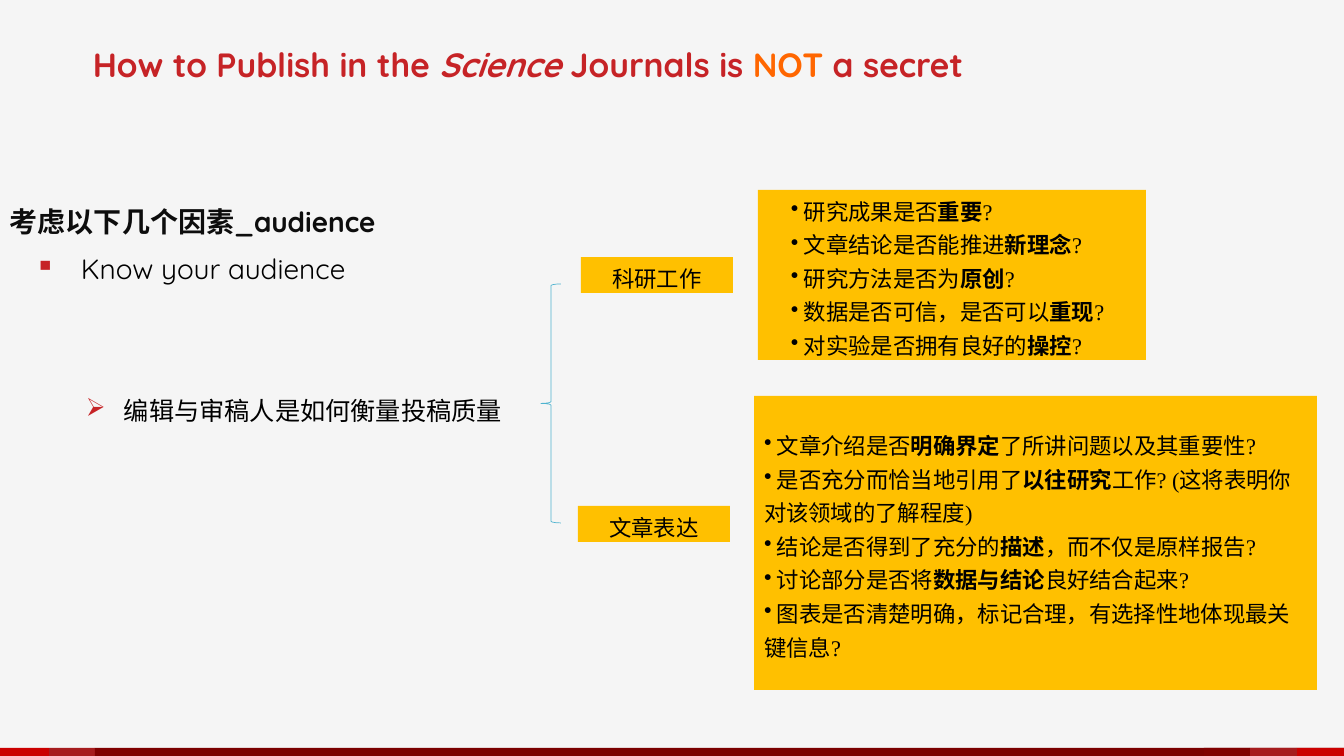
from lxml import etree
from pptx import Presentation
from pptx.dml.color import RGBColor
from pptx.enum.shapes import MSO_SHAPE
from pptx.enum.text import MSO_ANCHOR, PP_ALIGN
from pptx.oxml.ns import qn
from pptx.util import Pt

EMU_PER_PX = 914400 / 100.8
RECTANGLE, LEFT_BRACE = MSO_SHAPE.RECTANGLE, MSO_SHAPE.LEFT_BRACE
MIDDLE, TOP = MSO_ANCHOR.MIDDLE, MSO_ANCHOR.TOP
LEFT, CENTER = PP_ALIGN.LEFT, PP_ALIGN.CENTER

BACKGROUND = RGBColor(0xF5, 0xF5, 0xF5)
RED = RGBColor(0xC6, 0x23, 0x26)
ORANGE = RGBColor(0xFF, 0x66, 0x00)
AMBER = RGBColor(0xFF, 0xC0, 0x00)
TEAL = RGBColor(0x4E, 0xB3, 0xCF)
BLACK = RGBColor(0x00, 0x00, 0x00)
NEAR_BLACK = RGBColor(0x0D, 0x0D, 0x0D)
BAR_DARK = RGBColor(0x7B, 0x00, 0x00)
BAR_MAROON = RGBColor(0x80, 0x00, 0x00)
BAR_CRIMSON = RGBColor(0xA6, 0x1C, 0x1E)
BAR_BRIGHT = RGBColor(0xCB, 0x00, 0x00)

SANS, SERIF = "Quicksand", "Times New Roman"

FOOTER_BARS = [
    (140, 1204, BAR_DARK),
    (0, 49, BAR_BRIGHT),
    (49, 46, BAR_CRIMSON),
    (95, 45, BAR_MAROON),
    (1297, 47, BAR_BRIGHT),
    (1250, 47, BAR_CRIMSON),
    (1204, 46, BAR_MAROON),
]
TITLE_RUNS = [
    ("How to Publish in the ", RED, False),
    ("Science ", RED, True),
    ("Journals is ", RED, False),
    ("NOT", ORANGE, False),
    (" a secret", RED, False),
]
RESEARCH_QUESTIONS = [
    " 研究成果是否*重要*?",
    " 文章结论是否能推进*新理念*?",
    " 研究方法是否为*原创*?",
    " 数据是否可信，是否可以*重现*?",
    " 对实验是否拥有良好的*操控*?",
]
WRITING_QUESTIONS = [
    " 文章介绍是否*明确界定*了所讲问题以及其重要性?",
    " 是否充分而恰当地引用了*以往研究*工作? (这将表明你对该领域的了解程度)",
    " 结论是否得到了充分的*描述*，而不仅是原样报告?",
    " 讨论部分是否将*数据与结论*良好结合起来?",
    " 图表是否清楚明确，标记合理，有选择性地体现最关键信息?",
]


def px(length):
    """Turn pixels into EMU."""
    return round(length * EMU_PER_PX)


def add_box(slide, kind, left, top, width, height, fill=None):
    """Add a preset shape without outline or shadow."""
    shape = slide.shapes.add_shape(kind, px(left), px(top), px(width), px(height))
    shape.shadow.inherit = False
    shape.line.fill.background()
    if fill is None:
        shape.fill.background()
    else:
        shape.fill.solid()
        shape.fill.fore_color.rgb = fill
    return shape


def add_text_box(slide, left, top, width, height, inset_top=5):
    """Add a wrapping text box and return its text frame."""
    box = slide.shapes.add_textbox(px(left), px(top), px(width), px(height))
    frame = box.text_frame
    frame.word_wrap = True
    frame.vertical_anchor = TOP
    frame.margin_top = px(inset_top)
    return frame


def next_paragraph(frame, index):
    """Return the first paragraph of a frame, or a new one after it."""
    return frame.add_paragraph() if index else frame.paragraphs[0]


def set_bullet(paragraph, character, color=None, margin=0, hanging=0):
    """Give a paragraph a bullet character and its indents."""
    properties = paragraph._p.get_or_add_pPr()
    properties.set("marL", str(px(margin)))
    properties.set("indent", str(-px(hanging)))
    if color is not None:
        bullet_color = etree.SubElement(properties, qn("a:buClr"))
        etree.SubElement(bullet_color, qn("a:srgbClr")).set("val", str(color))
    etree.SubElement(properties, qn("a:buChar")).set("char", character)


def set_font(paragraph, name, size, color, bold=False):
    """Set the font shared by all runs of a paragraph."""
    font = paragraph.font
    font.name, font.size, font.bold = name, Pt(size), bold
    font.color.rgb = color


def add_panel(slide, left, top, width, height, lines, bullet=None, inset=10, align=LEFT):
    """Add an amber panel whose text between asterisks is bold."""
    panel = add_box(slide, RECTANGLE, left, top, width, height, AMBER)
    frame = panel.text_frame
    frame.word_wrap = True
    frame.vertical_anchor = MIDDLE
    frame.margin_left = px(inset)
    for index, line in enumerate(lines):
        paragraph = next_paragraph(frame, index)
        paragraph.alignment = align
        paragraph.line_spacing = Pt(24)
        if bullet:
            set_bullet(paragraph, bullet)
        set_font(paragraph, SERIF, 16, BLACK)
        for part, text in enumerate(line.split("*")):
            run = paragraph.add_run()
            run.text = text
            if part % 2:
                run.font.bold = True


def add_title(slide):
    """Add the title with its emphasised words."""
    paragraph = add_text_box(slide, 0, 43, 1056, 79).paragraphs[0]
    paragraph.alignment = CENTER
    paragraph.line_spacing = 0.9
    paragraph.font.name, paragraph.font.size, paragraph.font.bold = SANS, Pt(24), True
    for text, color, italic in TITLE_RUNS:
        run = paragraph.add_run()
        run.text = text
        run.font.color.rgb = color
        run.font.italic = italic


def add_outline(slide):
    """Add the heading and the bulleted points on the left."""
    frame = add_text_box(slide, 0, 146, 706, 206, inset_top=62)
    points = [
        ("考虑以下几个因素_audience", 20, NEAR_BLACK, True, 0, None, 0),
        ("Know your audience", 20, BLACK, False, 12, "▪", 71),
        ("编辑与审稿人是如何衡量投稿质量", 18, BLACK, False, 81, "➢", 114),
    ]
    for index, (text, size, color, bold, space, bullet, margin) in enumerate(points):
        paragraph = next_paragraph(frame, index)
        paragraph.line_spacing = 0.9
        paragraph.space_before = Pt(space)
        if bullet:
            set_bullet(paragraph, bullet, RED, margin, 46 if index == 1 else 38)
        set_font(paragraph, SANS, size, color, bold)
        paragraph.add_run().text = text


def main():
    """Build the slide and save it."""
    presentation = Presentation()
    presentation.slide_width, presentation.slide_height = px(1344), px(756)
    slide = presentation.slides.add_slide(presentation.slide_layouts[6])
    slide.background.fill.solid()
    slide.background.fill.fore_color.rgb = BACKGROUND

    for left, width, color in FOOTER_BARS:
        add_box(slide, RECTANGLE, left, 748, width, 8, color)
    add_outline(slide)
    add_title(slide)

    add_panel(slide, 758, 190, 388, 170, RESEARCH_QUESTIONS, "•", inset=33)
    brace = add_box(slide, LEFT_BRACE, 541, 284, 20, 239)
    brace.line.color.rgb = TEAL
    brace.line.width = Pt(0.5)
    add_panel(slide, 581, 257, 152, 36, ["科研工作"], align=CENTER)
    add_panel(slide, 754, 396, 563, 294, WRITING_QUESTIONS, "•")
    add_panel(slide, 578, 506, 152, 36, ["文章表达"], align=CENTER)
    presentation.save("out.pptx")


if __name__ == "__main__":
    main()
